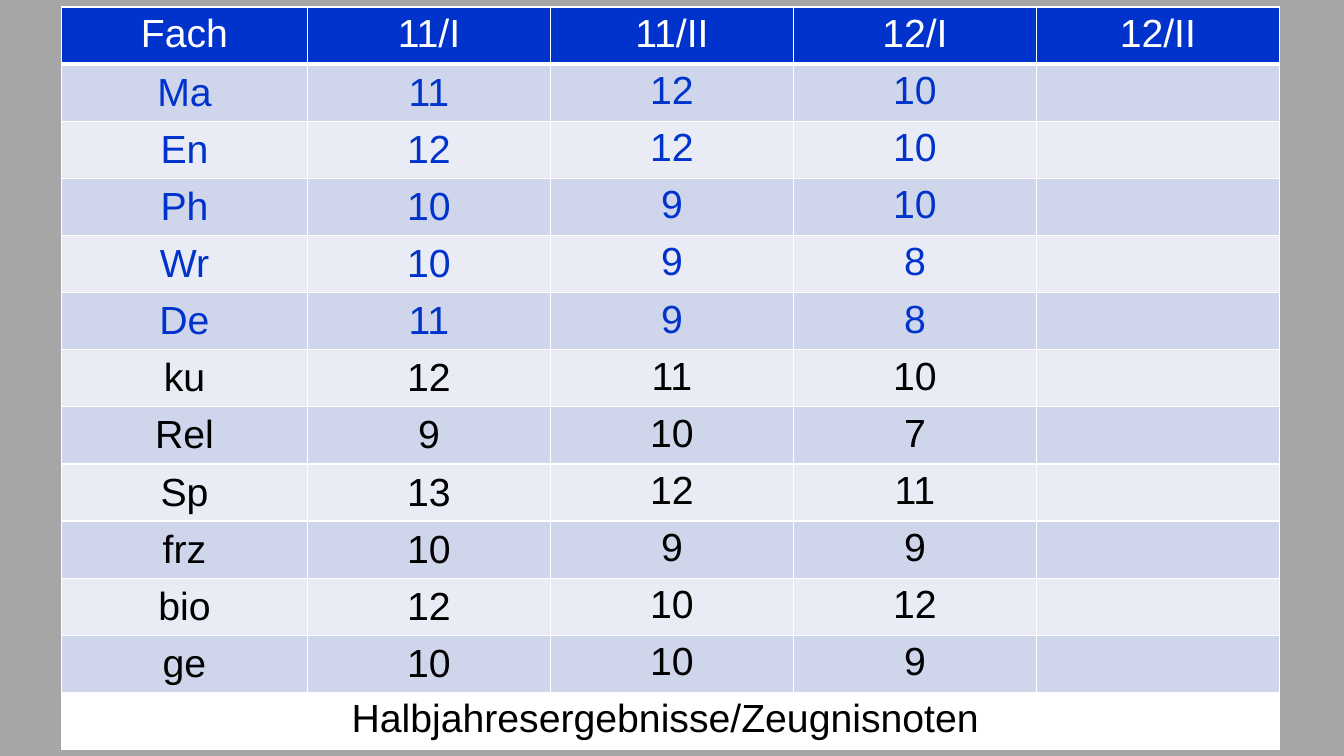
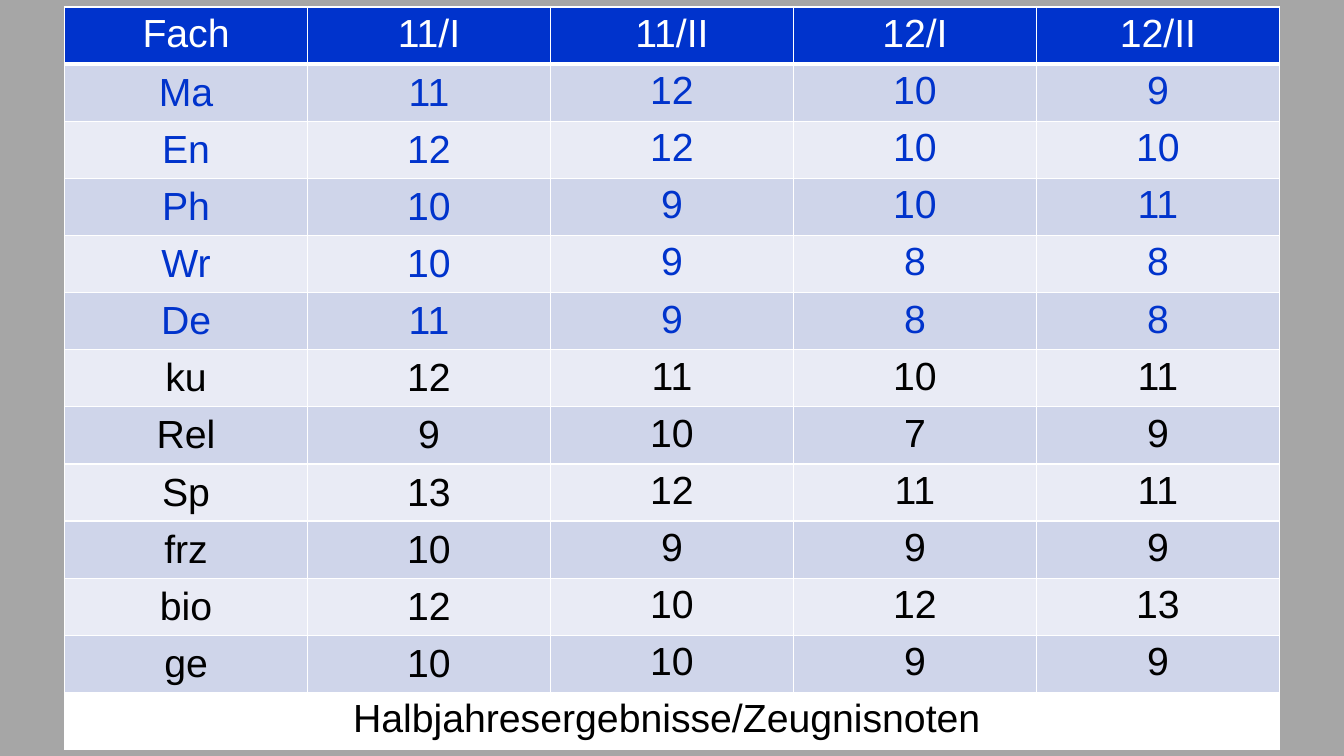
from dataclasses import dataclass

from lxml import etree
from pptx import Presentation
from pptx.dml.color import RGBColor
from pptx.enum.text import MSO_ANCHOR, PP_ALIGN
from pptx.oxml.ns import qn
from pptx.util import Inches, Pt

CENTER = PP_ALIGN.CENTER
TOP, MIDDLE = MSO_ANCHOR.TOP, MSO_ANCHOR.MIDDLE


@dataclass(frozen=True)
class Theme:
    """Colours, type and line widths shared by the slides."""

    backdrop: str = "A6A6A6"
    accent: str = "0033CC"
    text: str = "000000"
    white: str = "FFFFFF"
    bands: tuple = ("CFD5EA", "E9EBF5")
    font: str = "Arial"
    size: int = 28
    thin: int = 1
    thick: int = 3


THEME = Theme()
HEADINGS = ("Fach", "11/I", "11/II", "12/I", "12/II")
GRADES = {
    "Ma": (11, 12, 10, 9),
    "En": (12, 12, 10, 10),
    "Ph": (10, 9, 10, 11),
    "Wr": (10, 9, 8, 8),
    "De": (11, 9, 8, 8),
    "ku": (12, 11, 10, 11),
    "Rel": (9, 10, 7, 9),
    "Sp": (13, 12, 11, 11),
    "frz": (10, 9, 9, 9),
    "bio": (12, 10, 12, 13),
    "ge": (10, 10, 9, 9),
}
MAIN_SUBJECTS = 5
CAPTION = "Halbjahresergebnisse/Zeugnisnoten "
TERMS_LEFT = 3.05
TERM_WIDTH = 2.41
TABLE_TOP = 0.07
TABLE_HEIGHT = 7.37


def set_borders(cell, top, bottom):
    """Draw white borders around a cell, with given top and bottom widths."""
    properties = cell._tc.get_or_add_tcPr()
    widths = {"a:lnL": THEME.thin, "a:lnR": THEME.thin, "a:lnT": top, "a:lnB": bottom}
    for side, width in widths.items():
        border = etree.SubElement(properties, qn(side), w=str(Pt(width)))
        fill = etree.SubElement(border, qn("a:solidFill"))
        etree.SubElement(fill, qn("a:srgbClr"), val=THEME.white)


def style_cell(cell, text, fill, color, anchor=TOP, top=THEME.thin, bottom=THEME.thin):
    """Fill one cell and set its centred text."""
    set_borders(cell, top, bottom)
    cell.fill.solid()
    cell.fill.fore_color.rgb = RGBColor.from_string(fill)
    cell.vertical_anchor = anchor
    cell.text = text
    paragraph = cell.text_frame.paragraphs[0]
    paragraph.alignment = CENTER
    paragraph.font.name = THEME.font
    paragraph.font.size = Pt(THEME.size)
    paragraph.font.color.rgb = RGBColor.from_string(color)


def add_grade_table(slide, subject_width, terms_shown):
    """Add the grade table with the first terms filled in."""
    row_count, column_count = len(GRADES) + 2, len(HEADINGS)
    term_count = column_count - 1
    table = slide.shapes.add_table(
        row_count, column_count,
        Inches(TERMS_LEFT - subject_width), Inches(TABLE_TOP),
        Inches(subject_width + term_count * TERM_WIDTH), Inches(TABLE_HEIGHT),
    ).table
    table.first_row = table.horz_banding = False
    for column, width in zip(table.columns, [subject_width] + [TERM_WIDTH] * term_count):
        column.width = Inches(width)

    for column, heading in enumerate(HEADINGS):
        style_cell(table.cell(0, column), heading, THEME.accent, THEME.white,
                   bottom=THEME.thick)

    for row, (subject, grades) in enumerate(GRADES.items(), start=1):
        shown = [str(grade) for grade in grades[:terms_shown]]
        texts = [subject, *shown] + [""] * (term_count - terms_shown)
        color = THEME.accent if row <= MAIN_SUBJECTS else THEME.text
        for column, text in enumerate(texts):
            style_cell(table.cell(row, column), text, THEME.bands[(row - 1) % 2], color,
                       anchor=MIDDLE if column < 2 else TOP,
                       top=THEME.thick if row == 1 else THEME.thin)

    caption = table.cell(row_count - 1, 0)
    caption.merge(table.cell(row_count - 1, column_count - 1))
    style_cell(caption, CAPTION, THEME.white, THEME.text)


def add_grade_slide(deck, subject_width, terms_shown):
    """Add a grey slide holding the grade table."""
    slide = deck.slides.add_slide(deck.slide_layouts[6])
    backdrop = slide.background.fill
    backdrop.solid()
    backdrop.fore_color.rgb = RGBColor.from_string(THEME.backdrop)
    add_grade_table(slide, subject_width, terms_shown)


def main():
    """Build and save the presentation."""
    deck = Presentation()
    deck.slide_width, deck.slide_height = Inches(13.33), Inches(7.5)
    add_grade_slide(deck, subject_width=2.44, terms_shown=3)
    add_grade_slide(deck, subject_width=2.41, terms_shown=4)
    deck.save("out.pptx")


if __name__ == "__main__":
    main()
